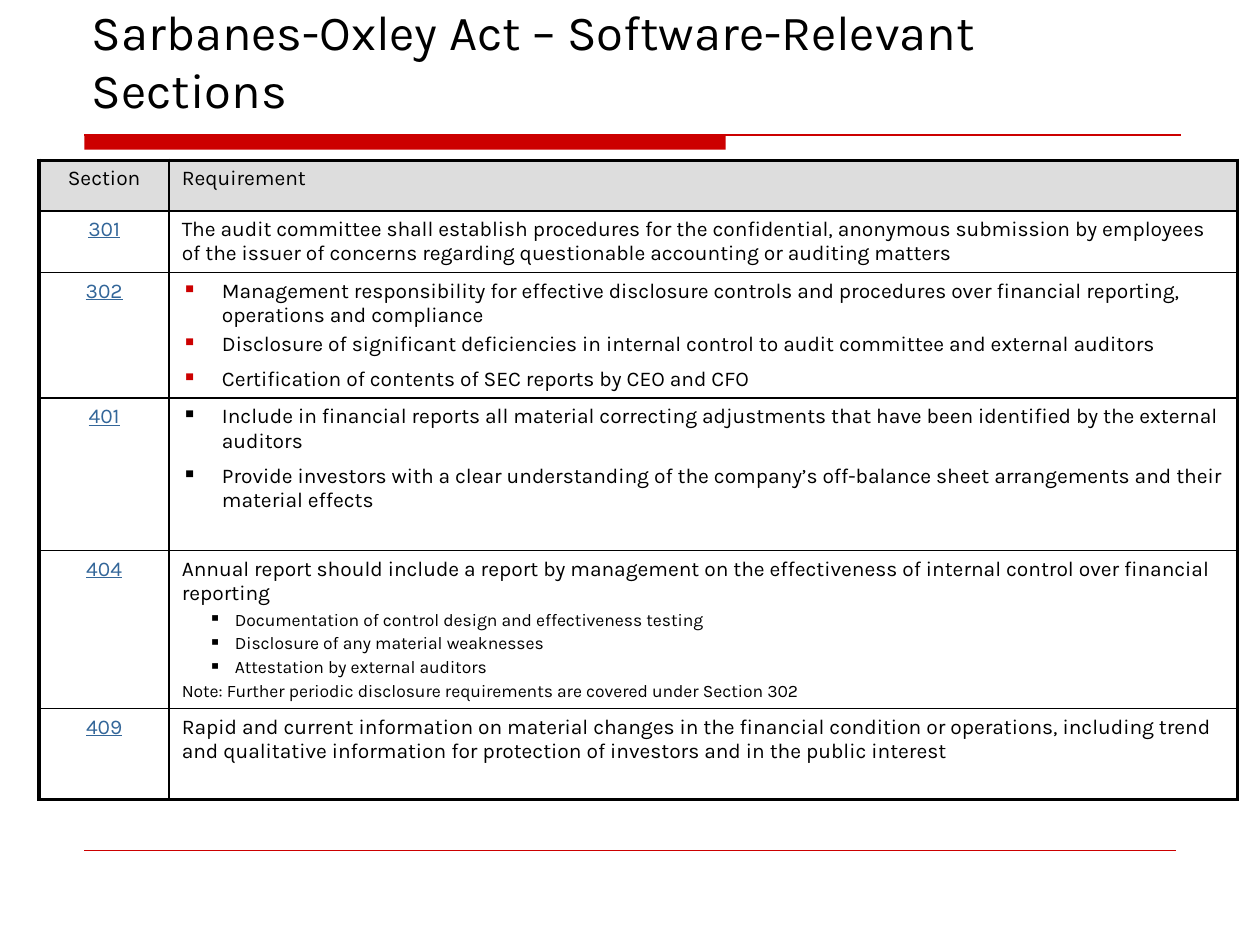
import pptx
import pptx.dml.color
import pptx.enum.shapes
import pptx.enum.text
import pptx.oxml
import pptx.oxml.ns
import pptx.util
from pptx.util import Cm, Pt

# Content
FONT, BLACK, RED, LINK, GREY = "Karla", "000000", "CC0000", "336699", "DDDDDD"
TITLE = "Sarbanes-Oxley Act – Software-Relevant Sections"

# Paragraph kinds: size, space before, space after, indent (cm), hanging (cm), bullet colour
KINDS = {
    "plain": (12, 3, 0, 0, 0, None),
    "duty": (12, 2.4, 0, 0.81, 0.81, RED),
    "last duty": (12, 6, 0, 0.81, 0.81, RED),
    "disclosure": (12, 6, 0, 0.81, 0.81, BLACK),
    "intro": (12, 0, 2.4, 0, 0, None),
    "detail": (10, 0, 2, 1.07, 0.53, BLACK),
    "note": (10, 0, 2, 0, 0, None),
}

# Each row: height (cm), section, paragraphs as (kind, text)
ROWS = [
    (1.02, "Section", [("plain", "Requirement")]),
    (1.19, "301", [
        ("plain", "The audit committee shall establish procedures for the confidential, "
                  "anonymous submission by employees of the issuer of concerns regarding "
                  "questionable accounting or auditing matters")]),
    (1.83, "302", [
        ("duty", "Management responsibility for effective disclosure controls and procedures "
                 "over financial reporting, operations and compliance"),
        ("duty", "Disclosure of significant deficiencies in internal control to audit "
                 "committee and external auditors"),
        ("last duty", "Certification of contents of SEC reports by CEO and CFO")]),
    (3.07, "401", [
        ("disclosure", "Include in financial reports all material correcting adjustments that "
                       "have been identified by the external auditors"),
        ("disclosure", "Provide investors with a clear understanding of the company’s "
                       "off-balance sheet arrangements and their material effects")]),
    (1.6, "404", [
        ("intro", "Annual report should include a report by management on the effectiveness "
                  "of internal control over financial reporting"),
        ("detail", "Documentation of control design and effectiveness testing"),
        ("detail", "Disclosure of any material weaknesses"),
        ("detail", "Attestation by external auditors"),
        ("note", "Note: Further periodic disclosure requirements are covered under "
                 "Section 302")]),
    (1.83, "409", [
        ("plain", "Rapid and current information on material changes in the financial "
                  "condition or operations, including trend and qualitative information for "
                  "protection of investors and in the public interest")]),
]
COLUMNS = [2.62, 21.54]


def color(value):
    return pptx.dml.color.RGBColor.from_string(value)


def element(tag, inner="", attributes=""):
    return pptx.oxml.parse_xml(
        f'<a:{tag} {pptx.oxml.ns.nsdecls("a")} {attributes}>{inner}</a:{tag}>')


def solid(value):
    return f'<a:solidFill><a:srgbClr val="{value}"/></a:solidFill>'


def style(paragraph, size, value=BLACK, underline=False):
    for span in paragraph.runs:
        span.font.name, span.font.size = FONT, Pt(size)
        span.font.color.rgb = color(value)
        span.font.underline = underline


def add_rule(page, left, right, top, width):
    rule = page.shapes.add_connector(
        pptx.enum.shapes.MSO_CONNECTOR.STRAIGHT, Cm(left), Cm(top), Cm(right), Cm(top))
    rule.line.color.rgb, rule.line.width = color(RED), Pt(width)
    rule._element.spPr.append(element("effectLst"))


def set_borders(cell, widths):
    for side, width in widths.items():
        cell._tc.get_or_add_tcPr().append(
            element(f"ln{side}", solid(BLACK), f'w="{Pt(width)}"'))


def write_requirement(cell, paragraphs):
    cell.text_frame.text = "\n".join(text for kind, text in paragraphs)
    for para, (kind, text) in zip(cell.text_frame.paragraphs, paragraphs):
        size, before, after, indent, hanging, bullet = KINDS[kind]
        para.space_before, para.space_after = Pt(before), Pt(after)
        style(para, size)
        if bullet:
            properties = para._p.get_or_add_pPr()
            properties.set("marL", str(Cm(indent)))
            properties.set("indent", str(-Cm(hanging)))
            properties.append(element("buClr", f'<a:srgbClr val="{bullet}"/>'))
            properties.append(element("buChar", attributes='char="▪"'))


def main():
    deck = pptx.Presentation()
    deck.slide_width, deck.slide_height = Cm(25.4), Cm(19.05)
    page = deck.slides.add_slide(deck.slide_layouts[5])

    # Red bar under the title, and thin rules
    bar = page.shapes.add_shape(pptx.enum.shapes.MSO_SHAPE.RECTANGLE,
                                Cm(1.7), Cm(2.72), Cm(12.93), Cm(0.3))
    bar.shadow.inherit = False
    bar.fill.solid()
    bar.fill.fore_color.rgb = color(RED)
    bar.line.fill.background()
    add_rule(page, 1.7, 23.8, 2.72, 0.75)
    add_rule(page, 1.7, 23.7, 17.14, 0.25)

    # Title
    title = page.shapes.title
    title.left, title.top, title.width, title.height = Cm(1.6), Cm(0.84), Cm(22.22), Cm(1.68)
    frame = title.text_frame
    frame.text = TITLE
    frame.word_wrap = True
    frame.auto_size = pptx.enum.text.MSO_AUTO_SIZE.NONE
    frame.vertical_anchor = pptx.enum.text.MSO_ANCHOR.BOTTOM
    frame.paragraphs[0].alignment = pptx.enum.text.PP_ALIGN.LEFT
    style(frame.paragraphs[0], 28)

    # Table of sections
    heights = [height for height, section, paragraphs in ROWS]
    table = page.shapes.add_table(len(ROWS), len(COLUMNS), Cm(0.79), Cm(3.23),
                                  Cm(sum(COLUMNS)), Cm(sum(heights))).table
    table.first_row = table.horz_banding = False
    for column, width in zip(table.columns, COLUMNS):
        column.width = Cm(width)
    for index, (height, section, paragraphs) in enumerate(ROWS):
        header, final = index == 0, index == len(ROWS) - 1
        table.rows[index].height = Cm(height)
        number, requirement = table.cell(index, 0), table.cell(index, 1)

        number.text_frame.text = section
        para = number.text_frame.paragraphs[0]
        para.alignment = pptx.enum.text.PP_ALIGN.CENTER
        para.space_before = Pt(3)
        style(para, 12, BLACK if header else LINK, not header)
        write_requirement(requirement, paragraphs)

        # Thick outer frame, thin inner lines
        for cell in (number, requirement):
            set_borders(cell, {"L": 2.25 if cell is number else 1,
                               "R": 2.25 if cell is requirement else 1,
                               "T": 2.25 if header else 1,
                               "B": 2.25 if final else 1})
            if header:
                cell.fill.solid()
                cell.fill.fore_color.rgb = color(GREY)
            else:
                cell.fill.background()

    deck.save("out.pptx")


if __name__ == "__main__":
    main()
